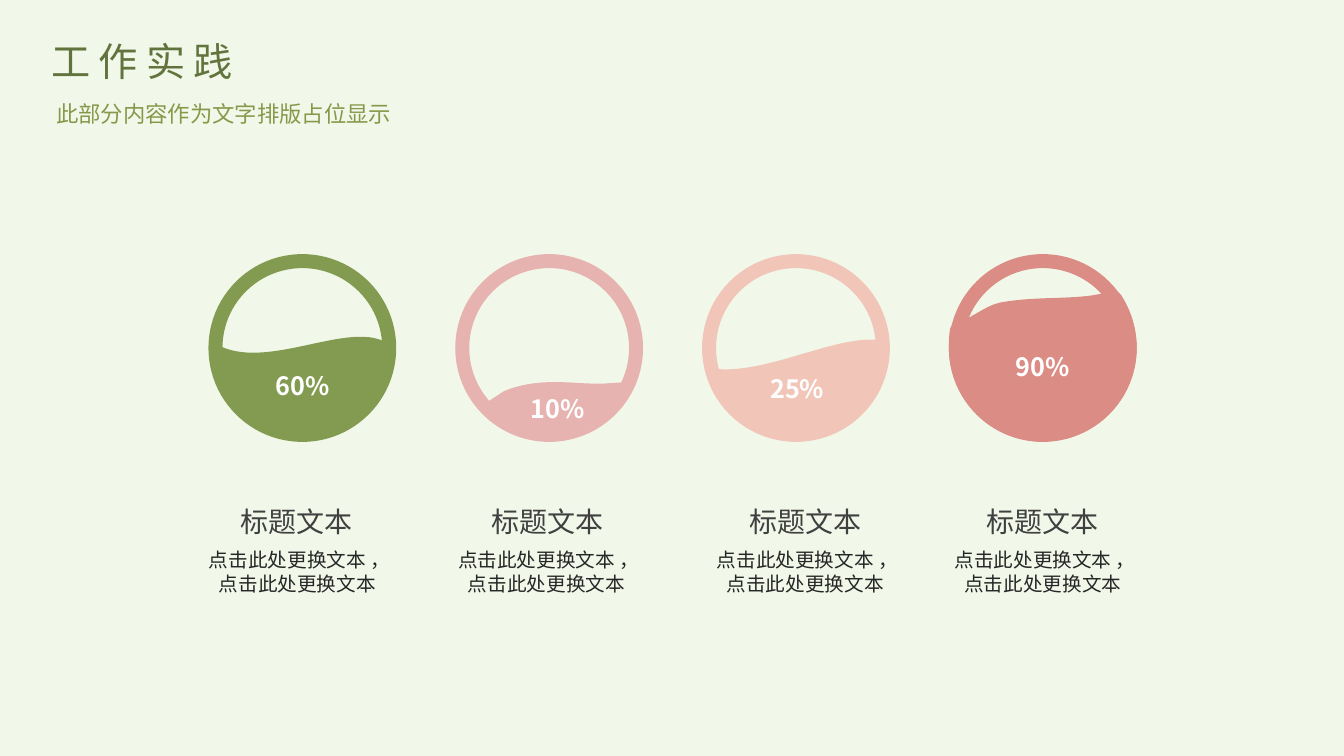
from pptx import Presentation, util as u
from pptx.dml.color import RGBColor
from pptx.enum import shapes, text
from pptx.oxml.ns import qn
from lxml import etree

FONT = "Noto Sans CJK SC"
COLORS = {
    "background": "F2F8E9", "title": "62743D", "subtitle": "88974A",
    "heading": "404040", "caption": "262626", "percent": "FFFFFF",
    "green": "839B51", "rose": "E7B3B0", "peach": "F1C6B9", "coral": "DA8C85",
}
TITLE = "工作实践"
SUBTITLE = "此部分内容作为文字排版占位显示"
HEADING = "标题文本"
CAPTION = "点击此处更换文本 ，点击此处更换文本 "

GAUGES = [
    {"percent": "60%", "color": "green", "outlined": False,
     "caption_left": 4.83, "heading_left": 5.79, "box": (0, 1.91, 4.39, 2.46),
     "wave": [
         [(4.39, 2.11)],
         [(4.42, 2.92), (3.99, 3.66), (3.30, 4.06)],
         [(2.62, 4.50), (1.75, 4.47), (1.07, 4.06)],
         [(0.38, 3.66), (-0.03, 2.90), (0, 2.08)],
         [(1.27, 2.84), (3.45, 1.40), (4.39, 2.11)]]},
    {"percent": "10%", "color": "rose", "outlined": True,
     "caption_left": 11.11, "heading_left": 12.12, "box": (0.76, 3.23, 3.30, 0.99),
     "wave": [
         [(4.06, 3.23)], [(4.01, 3.38)],
         [(3.71, 3.86), (3.05, 4.22), (2.26, 4.22)],
         [(1.73, 4.22), (1.27, 4.06), (0.91, 3.81)],
         [(0.76, 3.68)], [(1.14, 3.43)],
         [(2.11, 3.05), (2.95, 3.33), (3.76, 3.25)],
         [(4.06, 3.23)]]},
    {"percent": "25%", "color": "peach", "outlined": False,
     "caption_left": 17.63, "heading_left": 18.63, "box": (0, 1.95, 4.44, 2.51),
     "wave": [
         [(4.22, 1.98)], [(4.39, 2.01)], [(4.44, 2.18)],
         [(4.39, 3.53), (2.90, 4.32), (2.18, 4.47)],
         [(1.47, 4.60), (0.56, 3.89), (0.13, 3.02)],
         [(0, 2.67)], [(0.20, 2.72)],
         [(1.50, 2.82), (3.10, 1.91), (4.22, 1.98)]]},
    {"percent": "90%", "color": "coral", "outlined": True,
     "caption_left": 23.62, "heading_left": 24.59, "box": (0, 0.94, 4.38, 3.43),
     "wave": [
         [(4.01, 0.94)], [(4.01, 0.94)],
         [(4.24, 1.30), (4.38, 1.73), (4.38, 2.18)],
         [(4.38, 3.38), (3.40, 4.37), (2.18, 4.37)],
         [(0.97, 4.37), (0, 3.38), (0, 2.18)],
         [(0, 2.03), (0, 1.88), (0.03, 1.73)], [(0.03, 1.73)],
         [(0.41, 1.65), (0.79, 1.30), (1.14, 1.22)],
         [(1.93, 1.07), (2.72, 1.14), (3.45, 1.04)],
         [(4.01, 0.94)]]},
]
RING_LEFT, RING_TOP, RING_SIZE, RING_STEP = 5.43, 6.58, 4.38, 6.22


def rgb(name):
    return RGBColor.from_string(COLORS[name])


def write(frame, words, size, color, align, bold=False, spacing=None):
    paragraph = frame.paragraphs[0]
    paragraph.alignment = align
    paragraph.space_before = u.Pt(0)
    run = paragraph.add_run()
    run.text = words
    run.font.size = u.Pt(size)
    run.font.bold = bold
    run.font.color.rgb = rgb(color)
    run.font.name = FONT
    properties = run._r.get_or_add_rPr()
    etree.SubElement(properties, qn("a:ea"), typeface=FONT)
    if spacing:
        properties.set("spc", str(spacing * 100))
    return paragraph


def place(shape, left, top, width, height):
    shape.left, shape.top = u.Cm(left), u.Cm(top)
    shape.width, shape.height = u.Cm(width), u.Cm(height)
    shape.text_frame.vertical_anchor = text.MSO_ANCHOR.TOP
    shape.text_frame.auto_size = text.MSO_AUTO_SIZE.NONE


def curve_outline(shape, wave, left, top):
    outline = next(shape._element.iter(qn("a:path")))
    for step in list(outline):
        outline.remove(step)
    for index, points in enumerate(wave):
        tag = "a:moveTo" if index == 0 else "a:lnTo" if len(points) == 1 else "a:cubicBezTo"
        step = etree.SubElement(outline, qn(tag))
        for x, y in points:
            etree.SubElement(step, qn("a:pt"), x=str(u.Cm(x - left)), y=str(u.Cm(y - top)))
    etree.SubElement(outline, qn("a:close"))


def add_liquid(slide, ring_left, box, wave):
    left, top, width, height = box
    corners = [(left, top), (left + width, top),
               (left + width, top + height), (left, top + height)]
    points = [(u.Cm(ring_left + x), u.Cm(RING_TOP + y)) for x, y in corners]
    builder = slide.shapes.build_freeform(*points[0])
    builder.add_line_segments(points[1:], close=True)
    liquid = builder.convert_to_shape()
    curve_outline(liquid, wave, left, top)
    return liquid


def add_gauge(slide, left, gauge):
    color = rgb(gauge["color"])
    liquid = add_liquid(slide, left, gauge["box"], gauge["wave"])
    liquid.fill.solid()
    liquid.fill.fore_color.rgb = color
    ring = slide.shapes.add_shape(shapes.MSO_SHAPE.OVAL, u.Cm(left), u.Cm(RING_TOP),
                                  u.Cm(RING_SIZE), u.Cm(RING_SIZE))
    ring.fill.background()
    for part, has_line in ((liquid, gauge["outlined"]), (ring, True)):
        part.shadow.inherit = False
        if has_line:
            part.line.color.rgb = color
            part.line.width = u.Pt(10)
            etree.SubElement(part.line._get_or_add_ln(), qn("a:round"))
        else:
            part.line.fill.background()
    liquid.text_frame.vertical_anchor = text.MSO_ANCHOR.MIDDLE
    write(liquid.text_frame, gauge["percent"], 18, "percent", text.PP_ALIGN.CENTER, bold=True)


def add_label(slide, caption_left, heading_left):
    caption = slide.shapes.add_textbox(0, 0, 0, 0)
    place(caption, caption_left, 13.81, 5.44, 2.69)
    caption.text_frame.word_wrap = True
    caption.text_frame.margin_top = caption.text_frame.margin_bottom = 0
    write(caption.text_frame, CAPTION, 14, "caption", text.PP_ALIGN.CENTER)
    heading = slide.shapes.add_textbox(0, 0, 0, 0)
    place(heading, heading_left, 12.6, 3.35, 1.12)
    heading.text_frame.word_wrap = False
    write(heading.text_frame, HEADING, 20, "heading", text.PP_ALIGN.CENTER)


def main():
    deck = Presentation()
    deck.slide_width, deck.slide_height = u.Cm(33.87), u.Cm(19.05)
    slide = deck.slides.add_slide(deck.slide_layouts[2])
    slide.background.fill.solid()
    slide.background.fill.fore_color.rgb = rgb("background")

    title, subtitle = slide.shapes.title, slide.placeholders[1]
    place(title, 1.04, 0.81, 6.99, 1.45)
    write(title.text_frame, TITLE, 28, "title", text.PP_ALIGN.LEFT, spacing=6)
    place(subtitle, 1.05, 2.26, 9.07, 1.02)
    subtitle.text_frame.word_wrap = False
    line = write(subtitle.text_frame, SUBTITLE, 16, "subtitle", text.PP_ALIGN.RIGHT)
    line.line_spacing = 1.2

    for index, gauge in enumerate(GAUGES):
        add_gauge(slide, RING_LEFT + index * RING_STEP, gauge)
        add_label(slide, gauge["caption_left"], gauge["heading_left"])
    deck.save("out.pptx")


if __name__ == "__main__":
    main()
